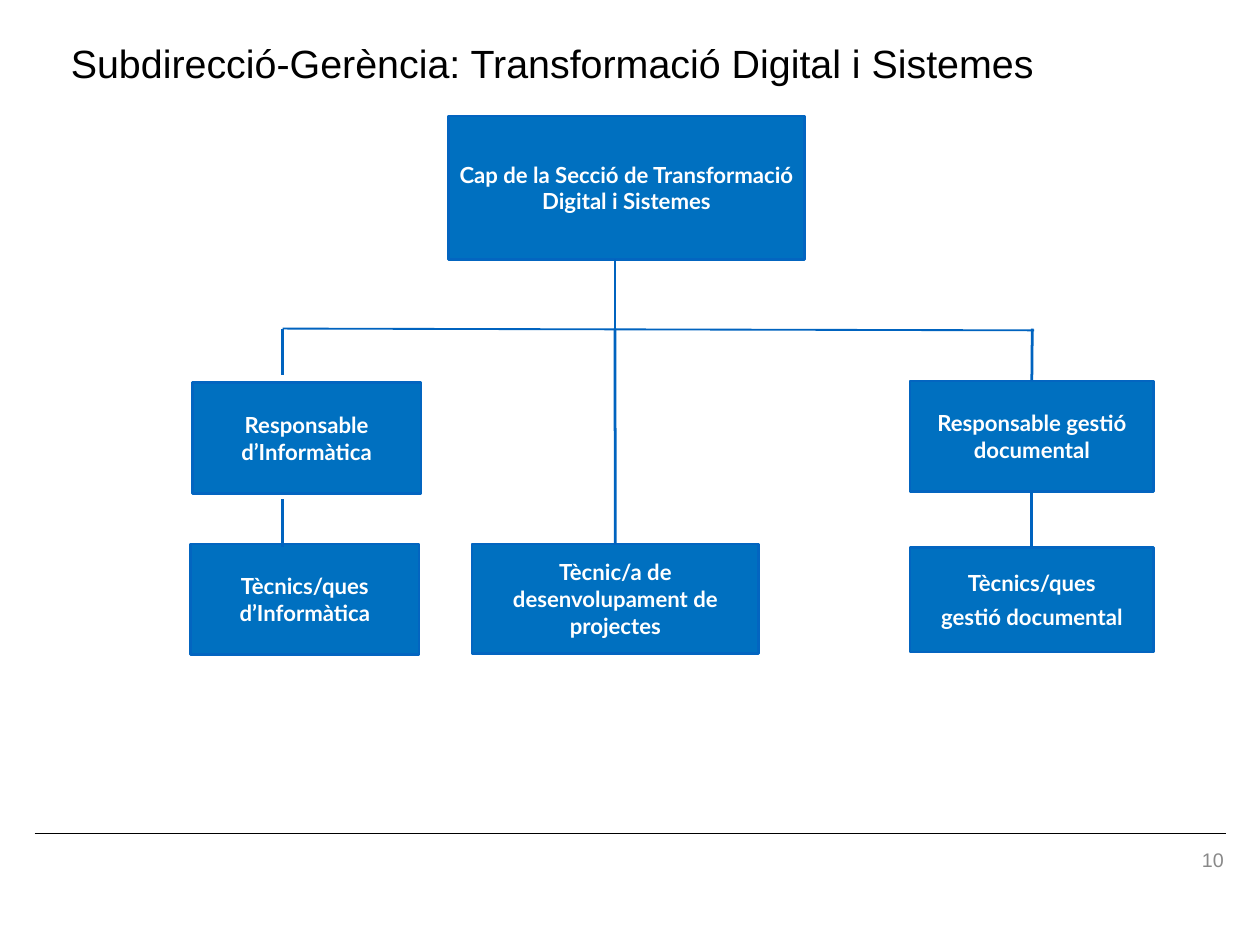
from pptx import Presentation
from pptx.dml.color import RGBColor
from pptx.enum.shapes import MSO_CONNECTOR, MSO_SHAPE
from pptx.enum.text import MSO_ANCHOR, PP_ALIGN
from pptx.oxml.ns import qn
from pptx.util import Inches, Pt
from lxml import etree

BOX_FILL = RGBColor(0x00, 0x70, 0xC0)
BOX_EDGE = RGBColor(0x03, 0x65, 0xC0)
LINK = RGBColor(0x00, 0x63, 0xBF)
BLACK = RGBColor(0, 0, 0)
WHITE = RGBColor(0xFF, 0xFF, 0xFF)
GREY = RGBColor(0x89, 0x89, 0x89)
STRAIGHT, RECTANGLE = MSO_CONNECTOR.STRAIGHT, MSO_SHAPE.RECTANGLE
LEFT, CENTER, RIGHT = PP_ALIGN.LEFT, PP_ALIGN.CENTER, PP_ALIGN.RIGHT
TOP, MIDDLE = MSO_ANCHOR.TOP, MSO_ANCHOR.MIDDLE
TOP_SITE, BOTTOM_SITE = 0, 2


def write_text(frame, lines, font_name, size, color, align, anchor, inset, bold=False):
    """Fill a text frame with uniformly styled paragraphs."""
    frame.word_wrap = True
    frame.vertical_anchor = anchor
    frame.margin_left = frame.margin_right = Inches(inset)
    frame.margin_top = frame.margin_bottom = Inches(inset)
    for index, line in enumerate(lines):
        paragraph = frame.add_paragraph() if index else frame.paragraphs[0]
        paragraph.text = line
        paragraph.alignment = align
        if index:
            paragraph.space_before = Pt(6.4)
        font = paragraph.font
        font.name, font.size, font.bold = font_name, Pt(size), bold
        font.color.rgb = color


def add_label(slide, box, text, size, color, align, anchor):
    """Place one line of Arial text in a box."""
    label = slide.shapes.add_textbox(*map(Inches, box))
    write_text(label.text_frame, [text], "Arial", size, color, align, anchor, 0.07)
    return label


def add_role(slide, box, *lines):
    """Place one role of the chart in a box."""
    role = slide.shapes.add_shape(RECTANGLE, *map(Inches, box))
    role.shadow.inherit = False
    role.fill.solid()
    role.fill.fore_color.rgb = BOX_FILL
    role.line.color.rgb = BOX_EDGE
    role.line.width = Pt(2)
    write_text(role.text_frame, lines, "Lato", 18, WHITE, CENTER, MIDDLE, 0.04, bold=True)
    return role


def add_link(slide, start, end, color=LINK, width=2.25, above=None, below=None):
    """Draw a line, joined to the roles above and below when given."""
    link = slide.shapes.add_connector(STRAIGHT, *map(Inches, start + end))
    link.line.color.rgb = color
    link.line.width = Pt(width)
    etree.SubElement(link._element.spPr, qn("a:effectLst"))
    if above is not None:
        link.begin_connect(above, BOTTOM_SITE)
    if below is not None:
        link.end_connect(below, TOP_SITE)


def add_heading(slide, box):
    """Place the slide title."""
    heading = add_label(slide, box, "Subdirecció-Gerència: Transformació Digital i Sistemes",
                        32, BLACK, LEFT, TOP)
    heading.text_frame.paragraphs[0].line_spacing = 0.8


def add_organisation(slide, box):
    """Draw the roles and their links inside a box."""
    left, top, width, height = box
    it_x, project_x, records_x = left + 1.04, left + 4.79, left + 9.5
    bar_y, team_y = top + 2.4, top + 4.83

    add_role(slide, (left + 2.91, top, 4.02, 1.62),
             "Cap de la Secció de Transformació Digital i Sistemes")
    add_role(slide, (left + 0.02, top + 3.01, 2.58, 1.25), "Responsable d’Informàtica")
    add_role(slide, (left, team_y, 2.58, 1.25), "Tècnics/ques d’Informàtica")
    projects = add_role(slide, (left + 3.18, team_y, 3.23, 1.24),
                        "Tècnic/a de desenvolupament de projectes")
    records_lead = add_role(slide, (left + width - 2.75, top + 2.99, 2.75, 1.25),
                            "Responsable gestió documental")
    records_team = add_role(slide, (left + width - 2.75, top + height - 1.18, 2.75, 1.18),
                            "Tècnics/ques", "gestió documental")

    add_link(slide, (project_x, top + 1.62), (project_x, bar_y))
    add_link(slide, (project_x, bar_y), (project_x, team_y), below=projects)
    add_link(slide, (it_x, bar_y), (records_x + 0.02, bar_y + 0.02), width=1.5)
    add_link(slide, (it_x, bar_y), (it_x, top + 2.93))
    add_link(slide, (it_x, top + 4.33), (it_x, team_y + 0.04))
    add_link(slide, (records_x, bar_y), (records_x, top + 2.99), below=records_lead)
    add_link(slide, (records_x, top + 4.24), (records_x, team_y + 0.04),
             above=records_lead, below=records_team)


def add_footer(slide, box):
    """Draw the footer rule and page number inside a box."""
    left, top, width, height = box
    add_link(slide, (left, top), (left + width, top), BLACK, 1)
    add_label(slide, (left + width - 3.28, top + 0.09, 3.32, height - 0.09),
              "10", 16, GREY, RIGHT, MIDDLE)


def main():
    """Build and save the slide."""
    deck = Presentation()
    deck.slide_width, deck.slide_height = Inches(14.22), Inches(10.67)
    slide = deck.slides.add_slide(deck.slide_layouts[6])
    add_footer(slide, (0.39, 9.41, 13.45, 0.5))
    add_heading(slide, (0.73, 0.48, 11.34, 0.57))
    add_organisation(slide, (2.15, 1.31, 10.87, 6.05))
    deck.save("out.pptx")


if __name__ == "__main__":
    main()
